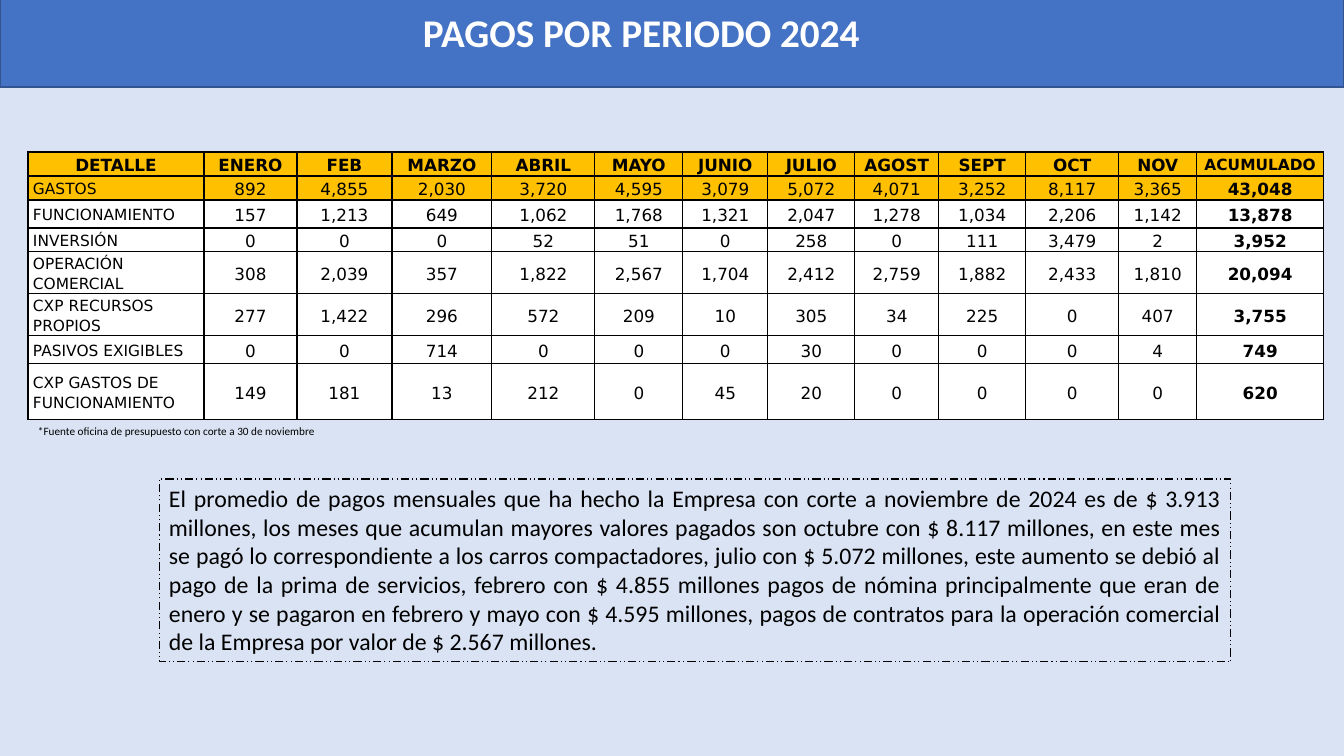
from lxml.etree import SubElement
from pptx import Presentation
from pptx.dml.color import RGBColor
from pptx.enum.dml import MSO_LINE
from pptx.enum.shapes import MSO_SHAPE
from pptx.enum.text import MSO_ANCHOR, PP_ALIGN
from pptx.oxml.ns import qn
from pptx.util import Pt

SCALE = 12192000 / 1344  # EMU per px


def px(*vals):
    return [round(v * SCALE) for v in vals]


def style(para, size, face, hue="000000", bold=False):
    font = para.font
    font.size, font.name, font.bold = Pt(size), face, bold
    font.color.rgb = RGBColor.from_string(hue)


# Slide and background
deck = Presentation()
deck.slide_width, deck.slide_height = px(1344, 756)
slide = deck.slides.add_slide(deck.slide_layouts[6])
back = slide.background.fill
back.solid()
back.fore_color.rgb = RGBColor.from_string("DAE3F3")

# Payments table
rows = [
    "DETALLE|ENERO|FEB|MARZO|ABRIL|MAYO|JUNIO|JULIO|AGOST|SEPT|OCT|NOV|ACUMULADO",
    "GASTOS|892|4,855|2,030|3,720|4,595|3,079|5,072|4,071|3,252|8,117|3,365|43,048",
    "FUNCIONAMIENTO|157|1,213|649|1,062|1,768|1,321|2,047|1,278|1,034|2,206|1,142|13,878",
    "INVERSIÓN|0|0|0|52|51|0|258|0|111|3,479|2|3,952",
    "OPERACIÓN COMERCIAL|308|2,039|357|1,822|2,567|1,704|2,412|2,759|1,882|2,433|1,810|20,094",
    "CXP RECURSOS PROPIOS|277|1,422|296|572|209|10|305|34|225|0|407|3,755",
    "PASIVOS EXIGIBLES|0|0|714|0|0|0|30|0|0|0|4|749",
    "CXP GASTOS DE FUNCIONAMIENTO|149|181|13|212|0|45|20|0|0|0|0|620",
]
wides = [176, 93, 95, 100, 103, 88, 85, 87, 84, 87, 93, 78, 127]
highs = [24, 24, 28, 24, 42, 42, 28, 56]
last = len(wides) - 1
frame = slide.shapes.add_table(len(highs), len(wides),
                               *px(28, 152, sum(wides), sum(highs)))
table = frame.table
table.first_row = table.horz_banding = False
for col, wide in zip(table.columns, px(*wides)):
    col.width = wide
for row, high in zip(table.rows, px(*highs)):
    row.height = high

for r, line in enumerate(rows):
    for c, word in enumerate(line.split("|")):
        cell = table.cell(r, c)
        cell.text = word
        cell.vertical_anchor = MSO_ANCHOR.MIDDLE
        cell.margin_left, cell.margin_right = px(5, 5)
        cell.margin_top = cell.margin_bottom = 0
        para = cell.text_frame.paragraphs[0]
        para.line_spacing = 1.15
        label = r > 0 and c == 0
        para.alignment = PP_ALIGN.LEFT if label else PP_ALIGN.CENTER
        small = label or (r == 0 and c == last)
        style(para, 11 if small else 12, "DejaVu Sans", bold=r == 0 or c == last)
        # Borders come before the fill in the cell properties
        props = cell._tc.get_or_add_tcPr()
        for side in ("a:lnL", "a:lnR", "a:lnT", "a:lnB"):
            edge = SubElement(props, qn(side), w=str(Pt(1)))
            SubElement(SubElement(edge, qn("a:solidFill")), qn("a:srgbClr"), val="000000")
        cell.fill.solid()
        cell.fill.fore_color.rgb = RGBColor.from_string("FFC000" if r < 2 else "FFFFFF")

# Title band
band = slide.shapes.add_shape(MSO_SHAPE.RECTANGLE, *px(0, -24, 1344, 111))
band.shadow.inherit = False
band.fill.solid()
band.fill.fore_color.rgb = RGBColor.from_string("4472C4")
band.line.color.rgb = RGBColor.from_string("325491")
band.line.width = Pt(1)

# Summary box
box = slide.shapes.add_shape(MSO_SHAPE.RECTANGLE, *px(159, 479, 1072, 183))
box.shadow.inherit = False
box.fill.background()
box.line.color.rgb = RGBColor.from_string("000000")
box.line.width = Pt(0.75)
box.line.dash_style = MSO_LINE.DASH_DOT_DOT

# Title, source note and summary text
title = slide.shapes.add_textbox(*px(413, 3, 503, 57))
note = slide.shapes.add_textbox(*px(28, 419, 360, 24))
summary = (
    "El promedio de pagos mensuales que ha hecho la Empresa con corte a noviembre de 2024 "
    "es de $ 3.913 millones, los meses que acumulan mayores valores pagados son octubre con "
    "$ 8.117 millones, en este mes se pagó lo correspondiente a los carros compactadores, "
    "julio con $ 5.072 millones, este aumento se debió al pago de la prima de servicios, "
    "febrero con $ 4.855 millones pagos de nómina principalmente que eran de enero y se "
    "pagaron en febrero y mayo con $ 4.595 millones, pagos de contratos para la operación "
    "comercial de la Empresa por valor de $ 2.567 millones."
)
source = "*Fuente oficina de presupuesto con corte a 30 de noviembre"
for shape, words, size, hue, bold, align in [
    (title, "PAGOS POR PERIODO 2024", 28, "FFFFFF", True, PP_ALIGN.LEFT),
    (note, source, 8, "000000", False, PP_ALIGN.LEFT),
    (box, summary, 17, "000000", False, PP_ALIGN.JUSTIFY),
]:
    text = shape.text_frame
    text.word_wrap = True
    text.vertical_anchor = MSO_ANCHOR.TOP
    text.text = words
    para = text.paragraphs[0]
    para.alignment = align
    style(para, size, "Calibri", hue, bold)

deck.save("out.pptx")
